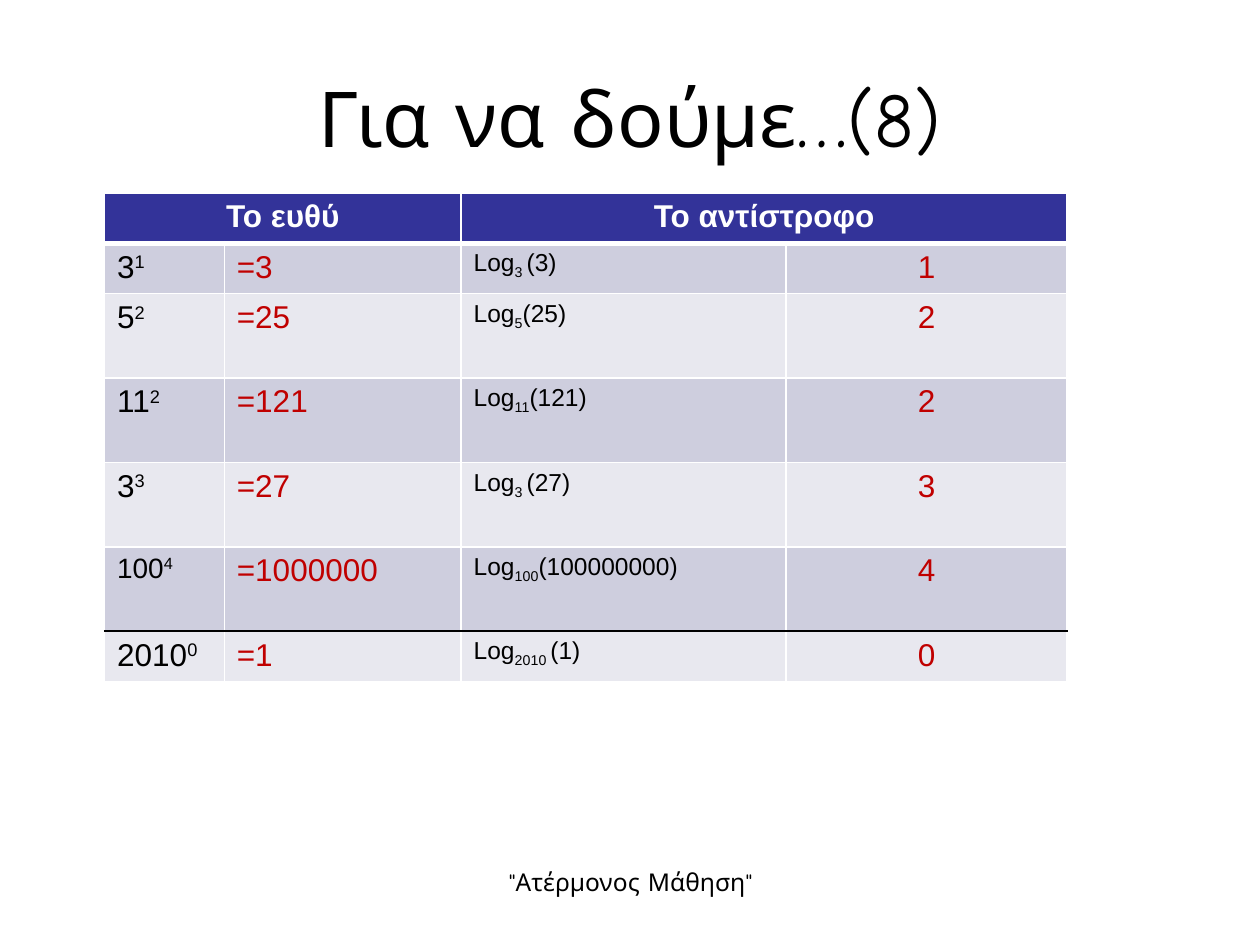
from dataclasses import dataclass

from lxml.etree import SubElement
from pptx import Presentation
from pptx.dml.color import RGBColor as Rgb
from pptx.enum.text import MSO_ANCHOR as Anchor, PP_ALIGN as Align
from pptx.oxml.ns import qn
from pptx.util import Inches, Pt


@dataclass(frozen=True)
class Theme:
    ink: str = "000000"
    white: str = "FFFFFF"
    red: str = "C00000"
    head: str = "333399"
    bands: tuple = ("CECEDE", "E8E8EF")
    title: int = 44
    body: int = 18
    small: int = 16
    note: int = 14
    sans: str = "Arial"
    comic: str = "Comic Neue"


T = Theme()


def write(frame, runs, size, color, font=T.sans, align=Align.LEFT, bold=False):
    """Write (text, baseline percent) runs into the first paragraph."""
    para = frame.paragraphs[0]
    para.alignment = align
    for text, base in runs:
        run = para.add_run()
        run.text = text
        run.font.size = Pt(size)
        run.font.name = font
        run.font.bold = bold
        run.font.color.rgb = Rgb.from_string(color)
        if base:
            run.font._element.set("baseline", str(base * 1000))


def paint(cell, fill, top, bottom):
    """Set the cell's four borders, then its fill."""
    props = cell._tc.get_or_add_tcPr()
    side = (T.white, 1)
    for tag, (color, width) in zip("LRTB", (side, side, top, bottom)):
        line = SubElement(props, qn(f"a:ln{tag}"), w=str(Pt(width)))
        solid = SubElement(line, qn("a:solidFill"))
        SubElement(solid, qn("a:srgbClr"), val=color)
    cell.fill.solid()
    cell.fill.fore_color.rgb = Rgb.from_string(fill)


deck = Presentation()
deck.slide_width, deck.slide_height = Inches(10), Inches(7.5)
slide = deck.slides.add_slide(deck.slide_layouts[6])

# Title and footer
labels = (
    ("Για να δούμε…(8)", (0.5, 0.3, 9, 1.25), T.title, Anchor.MIDDLE),
    ('"Ατέρμονος Μάθηση"', (3.42, 6.83, 3.17, 0.52), T.note, Anchor.TOP),
)
for text, place, size, anchor in labels:
    frame = slide.shapes.add_textbox(*map(Inches, place)).text_frame
    frame.word_wrap = True
    frame.vertical_anchor = anchor
    write(frame, [(text, 0)], size, T.ink, T.comic, Align.CENTER)

# Table data: base, power, base size, result, log base, log argument
data = (
    ("3", "1", T.body, "=3", "3 ", "(3)"),
    ("5", "2", T.body, "=25", "5", "(25)"),
    ("11", "2", T.body, "=121", "11", "(121)"),
    ("3", "3", T.body, "=27", "3 ", "(27)"),
    ("100", "4", T.small, "=1000000", "100", "(100000000)"),
    ("2010", "0", T.body, "=1", "2010 ", "(1)"),
)
widths = (0.95, 1.88, 2.58, 2.23)
heights = (0.4, 0.4, 0.67, 0.67, 0.67, 0.67, 0.38)

# Table grid
shape = slide.shapes.add_table(
    len(heights), len(widths), Inches(0.83), Inches(1.53),
    Inches(sum(widths)), Inches(sum(heights)))
table = shape.table
for col, width in zip(table.columns, widths):
    col.width = Inches(width)
for row, height in zip(table.rows, heights):
    row.height = Inches(height)

# Fills and borders: a thick line under the header, a black one above the last row
edges = [(T.white, 1)] * (len(heights) + 1)
edges[1] = (T.white, 3)
edges[-2] = (T.ink, 1)
for r, row in enumerate(table.rows):
    fill = T.bands[(r - 1) % 2] if r else T.head
    for cell in row.cells:
        paint(cell, fill, edges[r], edges[r + 1])

# Header
for c, text in ((0, "Το ευθύ"), (2, "Το αντίστροφο")):
    cell = table.cell(0, c)
    cell.merge(table.cell(0, c + 1))
    write(cell.text_frame, [(text, 0)], T.body, T.white, align=Align.CENTER, bold=True)

# Body: the power is also the value of the logarithm
for r, (base, power, size, result, sub, arg) in enumerate(data, 1):
    frames = [table.cell(r, c).text_frame for c in range(len(widths))]
    write(frames[0], [(base, 0), (power, 30)], size, T.ink)
    write(frames[1], [(result, 0)], T.body, T.red)
    write(frames[2], [("Log", 0), (sub, -25), (arg, 0)], T.note, T.ink)
    write(frames[3], [(power, 0)], T.body, T.red, align=Align.CENTER)

deck.save("out.pptx")
